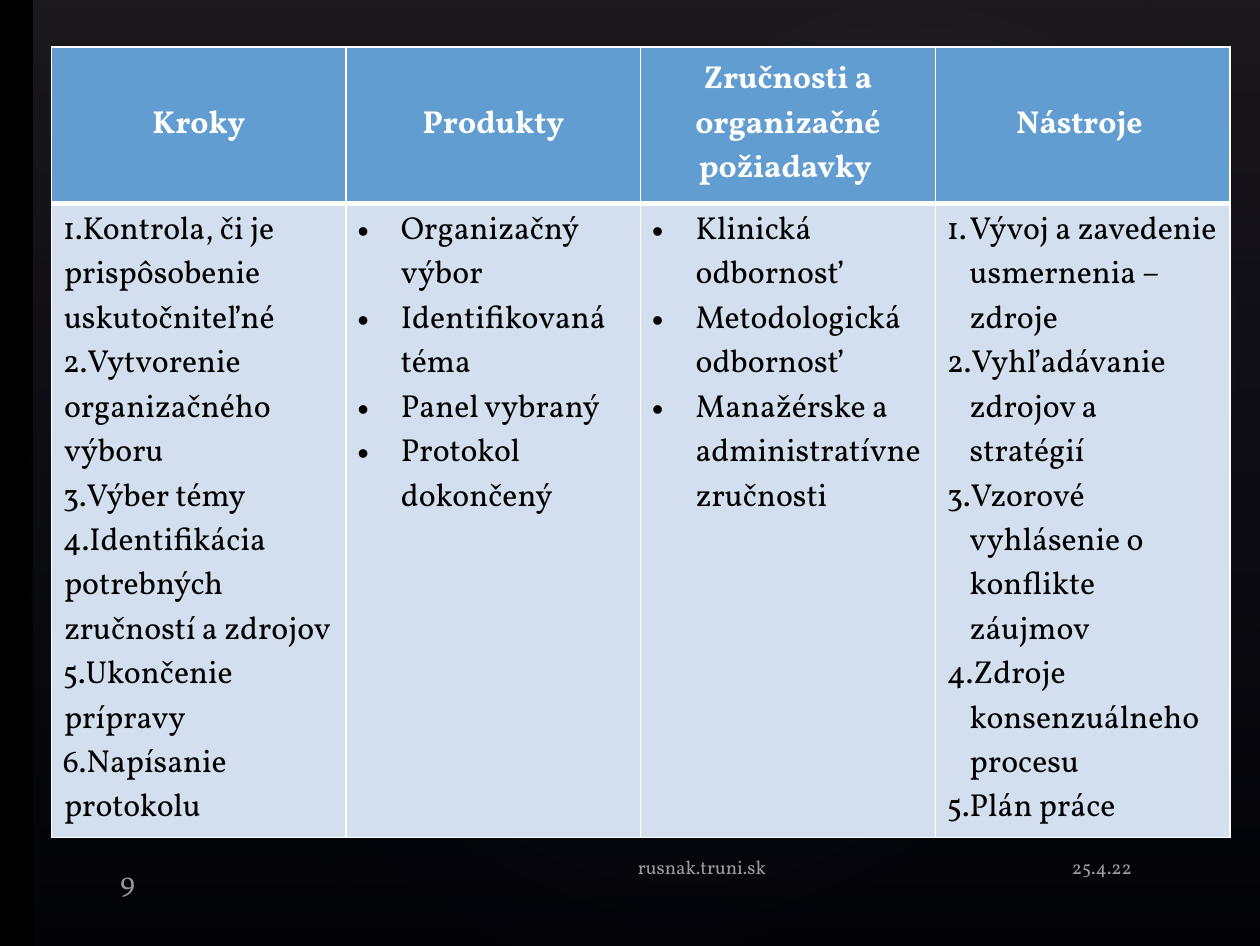
from lxml import etree
from pptx import Presentation
from pptx.dml.color import RGBColor
from pptx.enum.shapes import MSO_SHAPE
from pptx.enum.text import MSO_ANCHOR, PP_ALIGN
from pptx.oxml import parse_xml
from pptx.oxml.ns import nsdecls, qn
from pptx.util import Inches, Pt

RECTANGLE, OVAL = MSO_SHAPE.RECTANGLE, MSO_SHAPE.OVAL
TOP, MIDDLE, BOTTOM = MSO_ANCHOR.TOP, MSO_ANCHOR.MIDDLE, MSO_ANCHOR.BOTTOM
LEFT, CENTER, RIGHT = PP_ALIGN.LEFT, PP_ALIGN.CENTER, PP_ALIGN.RIGHT

BLACK = RGBColor(0x00, 0x00, 0x00)
WHITE = RGBColor(0xFF, 0xFF, 0xFF)
PLUM = RGBColor(0x50, 0x46, 0x52)
NAVY = RGBColor(0x24, 0x28, 0x52)
MIST = RGBColor(0xC4, 0xBC, 0xC6)
HEADER_BLUE = RGBColor(0x62, 0x9D, 0xD1)
BODY_BLUE = RGBColor(0xD3, 0xDF, 0xEE)

FONT = "Vollkorn"
PAGE_WIDTH, PAGE_HEIGHT = 11.02, 8.27
STRIP = 0.29
HEADER_HEIGHT = 1.37

LINEAR = '<a:lin ang="5400000" scaled="0"/>'
RADIAL = ('<a:path path="circle"><a:fillToRect l="50000" t="50000" '
          'r="50000" b="50000"/></a:path>')
NUMBERED = '<a:buFont typeface="+mj-lt"/><a:buAutoNum type="arabicPeriod"/>'
DOTTED = '<a:buFont typeface="Arial"/><a:buChar char="•"/>'

GLOWS = [
    ((1.65, 1.25, 8.73, 6.88), 328.7, 7),
    ((-0.33, 1.41, 6.68, 5.4), 294.3, 8),
    ((3.95, 0.14, 7.81, 5.73), 328.7, 8),
]

COLUMNS = [
    ("Kroky", NUMBERED, 0.01, [
        "Kontrola, či je prispôsobenie uskutočniteľné",
        "Vytvorenie organizačného výboru",
        "Výber témy",
        "Identifikácia potrebných zručností a zdrojov",
        "Ukončenie prípravy",
        "Napísanie protokolu"]),
    ("Produkty", DOTTED, 0.38, [
        "Organizačný výbor",
        "Identifikovaná téma",
        "Panel vybraný",
        "Protokol dokončený"]),
    ("Zručnosti a organizačné požiadavky ", DOTTED, 0.38, [
        "Klinická odbornosť",
        "Metodologická odbornosť",
        "Manažérske a administratívne zručnosti"]),
    ("Nástroje ", NUMBERED, 0.2, [
        "Vývoj a zavedenie usmernenia – zdroje",
        "Vyhľadávanie zdrojov a stratégií",
        "Vzorové vyhlásenie o konflikte záujmov",
        "Zdroje konsenzuálneho procesu",
        "Plán práce"]),
]

FOOTERS = [
    ("25.4.22", (9.12, 7.42, 0.89, 0.44), 12, RIGHT, TOP, 0.06),
    ("9", (0.94, 7.48, 0.9, 0.38), 18, LEFT, BOTTOM, 0.01),
    ("rusnak.truni.sk", (5.47, 7.42, 1.37, 0.44), 12, LEFT, TOP, 0.06),
]


def add_span(para, text, size, color, bold=False):
    span = para.add_run()
    span.text = text
    span.font.name = FONT
    span.font.size = Pt(size)
    span.font.bold = bold
    span.font.color.rgb = color
    return span


def add_gradient_shape(page, kind, box, stops, direction, rotation=0):
    shape = page.shapes.add_shape(kind, *map(Inches, box))
    shape.rotation = rotation
    shape.shadow.inherit = False
    shape.line.fill.background()
    shape.fill.background()
    marks = "".join(
        f'<a:gs pos="{place * 1000}"><a:srgbClr val="{color}">'
        f'<a:alpha val="{alpha * 1000}"/></a:srgbClr></a:gs>'
        for place, color, alpha in stops)
    gradient = parse_xml(
        f'<a:gradFill {nsdecls("a")} rotWithShape="1">'
        f'<a:gsLst>{marks}</a:gsLst>{direction}</a:gradFill>')
    properties = shape._element.spPr
    properties.replace(properties.find(qn("a:noFill")), gradient)


def add_backdrop(page, box):
    page.background.fill.solid()
    page.background.fill.fore_color.rgb = BLACK
    add_gradient_shape(page, RECTANGLE, box,
                       [(0, PLUM, 36), (100, NAVY, 10)], LINEAR)
    for glow_box, rotation, alpha in GLOWS:
        add_gradient_shape(page, OVAL, glow_box,
                           [(0, MIST, alpha), (58, NAVY, 0)], RADIAL, rotation)


def add_footer(page, text, box, size, alignment, anchor, bottom):
    frame = page.shapes.add_textbox(*map(Inches, box)).text_frame
    frame.word_wrap = True
    frame.vertical_anchor = anchor
    frame.margin_left = frame.margin_right = Inches(0.11)
    frame.margin_top = Inches(0.06)
    frame.margin_bottom = Inches(bottom)
    para = frame.paragraphs[0]
    para.alignment = alignment
    span = add_span(para, text, size, WHITE)
    color = span._r.rPr.find(".//" + qn("a:srgbClr"))
    etree.SubElement(color, qn("a:alpha"), val="60000")


def style_cell(cell, fill, top, bottom):
    cell.fill.solid()
    cell.fill.fore_color.rgb = fill
    properties = cell._tc.get_or_add_tcPr()
    sides = [("L", 1), ("R", 1), ("T", top), ("B", bottom)]
    for position, (side, width) in enumerate(sides):
        properties.insert(position, parse_xml(
            f'<a:ln{side} {nsdecls("a")} w="{Pt(width)}"><a:solidFill>'
            f'<a:srgbClr val="{WHITE}"/></a:solidFill></a:ln{side}>'))


def add_list(frame, items, bullet, indent):
    for index, item in enumerate(items):
        para = frame.add_paragraph() if index else frame.paragraphs[0]
        properties = para._p.get_or_add_pPr()
        properties.set("marL", str(Inches(indent)))
        properties.set("indent", str(-Inches(indent)))
        marks = parse_xml(
            f'<a:pPr {nsdecls("a")}><a:buClr><a:srgbClr val="{BLACK}"/>'
            f'</a:buClr>{bullet}</a:pPr>')
        properties.extend(list(marks))
        add_span(para, item, 20, BLACK)


def add_steps_table(page, box):
    left, top, width, height = map(Inches, box)
    table = page.shapes.add_table(2, len(COLUMNS), left, top, width, height).table
    table.horz_banding = False
    table.rows[0].height = Inches(HEADER_HEIGHT)
    table.rows[1].height = height - Inches(HEADER_HEIGHT)
    for index, (title, bullet, indent, items) in enumerate(COLUMNS):
        header, body = table.cell(0, index), table.cell(1, index)
        style_cell(header, HEADER_BLUE, 1, 3)
        style_cell(body, BODY_BLUE, 3, 1)
        header.vertical_anchor = MIDDLE
        para = header.text_frame.paragraphs[0]
        para.alignment = CENTER
        add_span(para, title, 20, WHITE, True)
        add_list(body.text_frame, items, bullet, indent)


def main():
    deck = Presentation()
    deck.slide_width = Inches(PAGE_WIDTH)
    deck.slide_height = Inches(PAGE_HEIGHT)
    page = deck.slides.add_slide(deck.slide_layouts[6])
    add_backdrop(page, (STRIP, 0, PAGE_WIDTH - STRIP, PAGE_HEIGHT))
    for footer in FOOTERS:
        add_footer(page, *footer)
    add_steps_table(page, (0.45, 0.41, 10.31, 6.91))
    deck.save("out.pptx")


if __name__ == "__main__":
    main()
